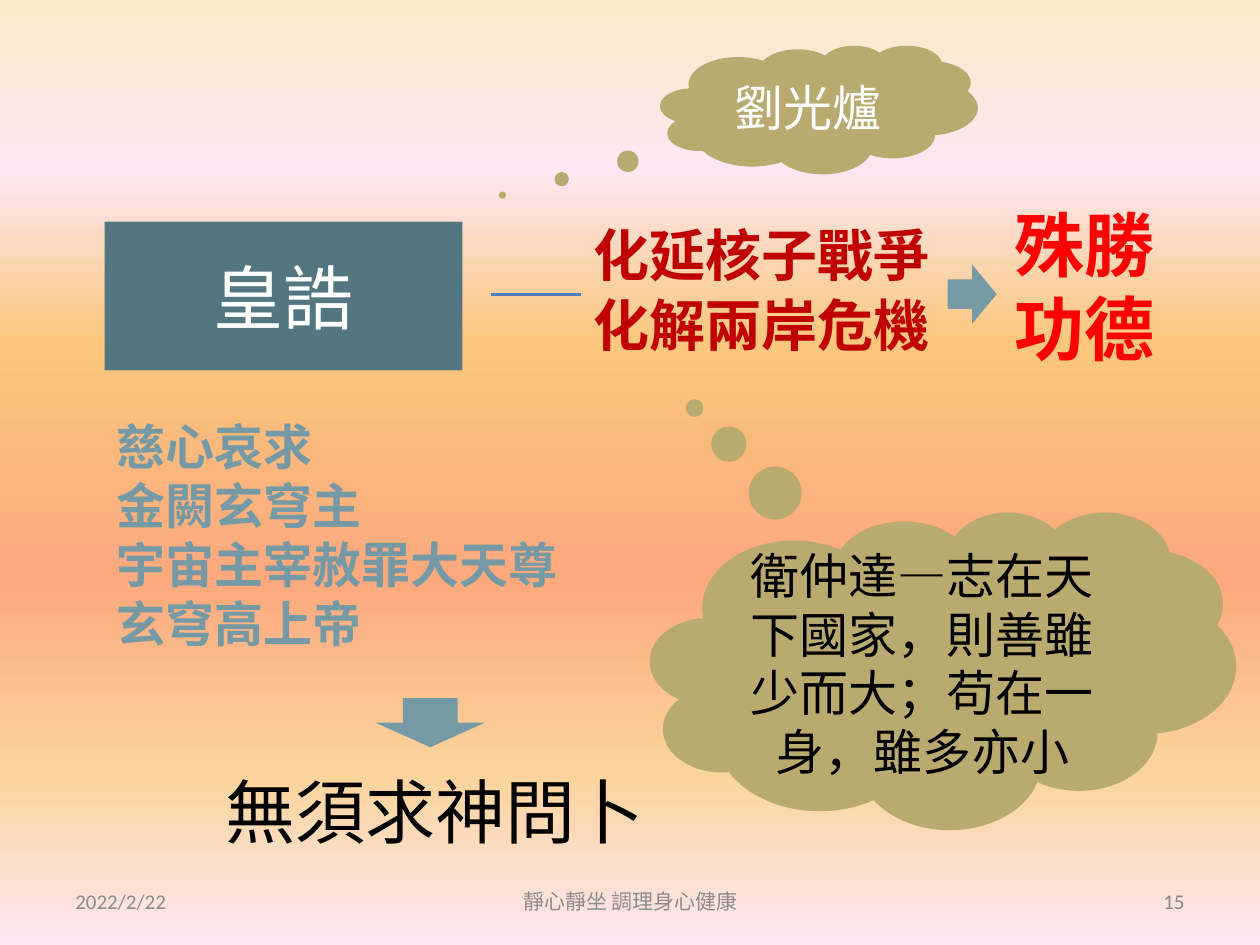
from lxml.etree import SubElement
from pptx import Presentation
from pptx.dml.color import RGBColor
from pptx.enum.shapes import MSO_CONNECTOR, MSO_SHAPE
from pptx.enum.text import MSO_ANCHOR, PP_ALIGN
from pptx.oxml.ns import qn
from pptx.util import Inches, Pt

BLACK = RGBColor(0x00, 0x00, 0x00)
WHITE = RGBColor(0xFF, 0xFF, 0xFF)
RED = RGBColor(0xFF, 0x00, 0x00)
DARK_RED = RGBColor(0xC0, 0x00, 0x00)
GRAY = RGBColor(0x8C, 0x8C, 0x8C)
NUMBER_GRAY = RGBColor(0x89, 0x89, 0x89)
BLUE_GRAY = RGBColor(0x75, 0x9A, 0xA5)
TEAL = RGBColor(0x53, 0x76, 0x80)
KHAKI = RGBColor(0xB9, 0xAB, 0x6F)
LINE_BLUE = RGBColor(0x4B, 0x7E, 0xBC)
STOPS = [(0, "FBEAC7"), (18, "FEE7F2"), (36, "FAC77D"),
         (61, "FBA97D"), (82, "FBD49C"), (100, "FEE7F2")]
JP = "Noto Sans CJK JP"
SC = "Noto Sans CJK SC"
LATIN = "Calibri"


def write(sp, text, size, color, font=LATIN, bold=False,
          align=PP_ALIGN.LEFT, anchor=MSO_ANCHOR.TOP):
    tf = sp.text_frame
    tf.word_wrap = True
    tf.vertical_anchor = anchor
    for i, line in enumerate(text.split("\n")):
        p = tf.add_paragraph() if i else tf.paragraphs[0]
        p.alignment = align
        r = p.add_run()
        r.text = line
        r.font.size = Pt(size)
        r.font.bold = bold
        r.font.color.rgb = color
        r.font.name = font
        if font != LATIN:
            SubElement(r._r.get_or_add_rPr(), qn("a:ea"), typeface=font)


def add_filled(kind, box, color):
    sp = s.shapes.add_shape(kind, *map(Inches, box))
    sp.shadow.inherit = False
    sp.fill.solid()
    sp.fill.fore_color.rgb = color
    sp.line.fill.background()
    return sp


prs = Presentation()
prs.slide_width = Inches(10)
prs.slide_height = Inches(7.5)
s = prs.slides.add_slide(prs.slide_layouts[6])

fill = s.background.fill
fill.gradient()
fill.gradient_angle = 270
stop_list = next(s.element.iter(qn("a:gsLst")))
for stop in list(stop_list):
    stop_list.remove(stop)
for pos, color in STOPS:
    stop = SubElement(stop_list, qn("a:gs"), pos=str(pos * 1000))
    SubElement(stop, qn("a:srgbClr"), val=color)

footers = [
    (0.5, 2.33, "2022/2/22", PP_ALIGN.LEFT, GRAY),
    (3.42, 3.17, "靜心靜坐 調理身心健康", PP_ALIGN.CENTER, GRAY),
    (7.17, 2.33, "15", PP_ALIGN.RIGHT, NUMBER_GRAY),
]
for left, width, text, align, color in footers:
    sp = s.shapes.add_textbox(Inches(left), Inches(6.95), Inches(width), Inches(0.4))
    write(sp, text, 12, color, align=align, anchor=MSO_ANCHOR.MIDDLE)

add_filled(MSO_SHAPE.RIGHT_ARROW, (7.52, 2.1, 0.39, 0.47), BLUE_GRAY)
add_filled(MSO_SHAPE.DOWN_ARROW, (2.98, 5.54, 0.87, 0.39), BLUE_GRAY)

blocks = [
    ((0.83, 1.76, 2.84, 1.18), MSO_SHAPE.RECTANGLE, (), TEAL, "皇誥", 40, WHITE, JP),
    ((5.16, 4.06, 4.65, 2.52), MSO_SHAPE.CLOUD_CALLOUT, (-0.424, -0.826), KHAKI,
     "衛仲達—志在天下國家，則善雖少而大；苟在一身，雖多亦小", 28, BLACK, LATIN),
    ((5.24, 0.36, 2.52, 1.02), MSO_SHAPE.CLOUD_CALLOUT, (-0.997, 0.666), KHAKI,
     "劉光爐", 28, WHITE, LATIN),
]
for box, kind, adjustments, color, text, size, text_color, font in blocks:
    sp = add_filled(kind, box, color)
    for i, value in enumerate(adjustments):
        sp.adjustments[i] = value
    write(sp, text, size, text_color, font, align=PP_ALIGN.CENTER, anchor=MSO_ANCHOR.MIDDLE)

line = s.shapes.add_connector(MSO_CONNECTOR.STRAIGHT, Inches(3.9), Inches(2.34),
                              Inches(4.61), Inches(2.34))
line.line.color.rgb = LINE_BLUE
line.line.width = Pt(1.5)
SubElement(line._element.spPr, qn("a:effectLst"))

labels = [
    ((7.95, 1.55, 1.38, 1.45), "殊勝功德", 40, RED, JP, True),
    ((1.69, 6.05, 3.54, 0.77), "無須求神問卜", 40, BLACK, JP, False),
    ((4.61, 1.7, 2.99, 0.64), "化延核子戰爭", 32, DARK_RED, SC, True),
    ((4.61, 2.26, 2.99, 0.64), "化解兩岸危機", 32, DARK_RED, SC, True),
    ((0.83, 3.26, 3.78, 1.99), "慈心哀求\n金闕玄穹主\n宇宙主宰赦罪大天尊玄穹高上帝",
     28, BLUE_GRAY, SC, True),
]
for box, text, size, color, font, bold in labels:
    sp = s.shapes.add_textbox(*map(Inches, box))
    write(sp, text, size, color, font, bold)

prs.save("out.pptx")
